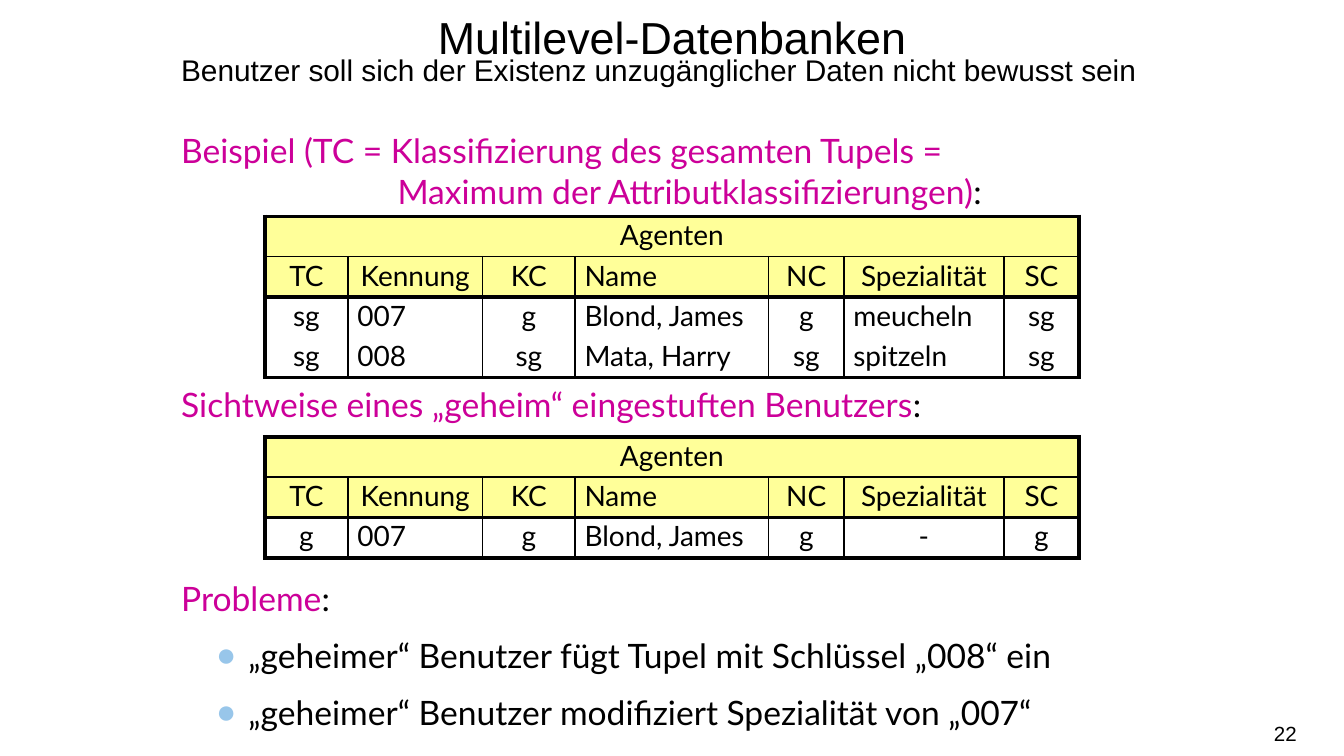
"""Build the slide on multilevel databases."""
from dataclasses import dataclass

import pptx
import pptx.dml.color
import pptx.enum.text
import pptx.oxml
import pptx.oxml.ns
import pptx.util
from pptx.util import Inches, Pt

BLACK = pptx.dml.color.RGBColor(0x00, 0x00, 0x00)
MAGENTA = pptx.dml.color.RGBColor(0xCC, 0x00, 0x99)
YELLOW = pptx.dml.color.RGBColor(0xFF, 0xFF, 0x99)
BULLET_BLUE = pptx.dml.color.RGBColor(0x98, 0xC6, 0xEA)

LEFT = pptx.enum.text.PP_ALIGN.LEFT
CENTER = pptx.enum.text.PP_ALIGN.CENTER
RIGHT = pptx.enum.text.PP_ALIGN.RIGHT
MIDDLE = pptx.enum.text.MSO_ANCHOR.MIDDLE
TOP = pptx.enum.text.MSO_ANCHOR.TOP

SLIDE_WIDTH = 10
SLIDE_HEIGHT = SLIDE_WIDTH * 9 / 16
THICK, THIN, NONE = 2.25, 1, 0
TITLE = "Agenten"
HEADERS = ("TC", "Kennung", "KC", "Name", "NC", "Spezialität", "SC")
COLUMN_WIDTHS = (0.62, 1, 0.69, 1.44, 0.56, 1.19, 0.56)
LEFT_COLUMNS = ("Kennung", "Name", "Spezialität")
ROW_HEIGHT = 0.3


@dataclass(frozen=True)
class Run:
    text: str
    size: float = 18
    font: str = "Lato"
    color: pptx.dml.color.RGBColor = BLACK


@dataclass(frozen=True)
class Line:
    runs: tuple[Run, ...]
    alignment: int = LEFT
    spacing: float = 1.0
    bullet: bool = False
    tab: float = 0


@dataclass(frozen=True)
class Block:
    left: float
    top: float
    width: float
    height: float
    lines: tuple[Line, ...]
    anchor: int = TOP
    side_inset: float = 0.1


@dataclass(frozen=True)
class AgentTable:
    top: float
    records: tuple[tuple[str, ...], ...]


def heading(text: str, tab: float = 0) -> Line:
    return Line((Run(text, color=MAGENTA), Run(":")), tab=tab)


def arial(text: str, size: float, alignment: int, spacing: float = 1.0) -> Line:
    return Line((Run(text, size, "Arial"),), alignment, spacing)


TITLE_BLOCK = Block(1.25, 0, 7.5, 0.45,
                    (arial("Multilevel-Datenbanken", 24, CENTER, 1.25),), MIDDLE)
BLOCKS = (
    Block(1.25, 0.39, 7.5, 0.56, (
        arial("Benutzer soll sich der Existenz unzugänglicher Daten nicht bewusst sein",
              16, LEFT, 0.8),)),
    Block(1.25, 0.92, 7.5, 0.71, (
        heading("Beispiel (TC = Klassifizierung des gesamten Tupels = \n"
                "\tMaximum der Attributklassifizierungen)", 1.61),)),
    Block(1.25, 2.81, 7.5, 0.4, (
        heading("Sichtweise eines „geheim“ eingestuften Benutzers"),)),
    Block(1.25, 4.25, 7.5, 1.31, (
        heading("Probleme"),
        Line((Run("„geheimer“ Benutzer fügt Tupel mit Schlüssel „008“ ein"),), bullet=True),
        Line((Run("„geheimer“ Benutzer modifiziert Spezialität von „007“"),), bullet=True))),
    Block(7.41, 5.31, 2.24, 0.3, (arial("22", 11, RIGHT),), MIDDLE, 0),
)
TABLES = (
    AgentTable(1.61, (("sg", "007", "g", "Blond, James", "g", "meucheln", "sg"),
                      ("sg", "008", "sg", "Mata, Harry", "sg", "spitzeln", "sg"))),
    AgentTable(3.25, (("g", "007", "g", "Blond, James", "g", "-", "g"),)),
)


def add_element(parent, tag: str, **attributes: str):
    element = parent.makeelement(pptx.oxml.ns.qn(tag), attributes)
    parent.append(element)
    return element


def add_run(paragraph, run: Run) -> None:
    for index, part in enumerate(run.text.split("\n")):
        if index:
            paragraph.add_line_break()
        text_run = paragraph.add_run()
        text_run.text = part
        text_run.font.size = Pt(run.size)
        text_run.font.name = run.font
        text_run.font.color.rgb = run.color


def write_line(paragraph, line: Line, first: bool) -> None:
    properties = paragraph._p.get_or_add_pPr()
    if line.bullet:
        paragraph.level = 1
        properties.set("marL", str(Inches(0.5)))
        properties.set("indent", str(Inches(-0.24)))
        bullet_color = add_element(properties, "a:buClr")
        add_element(bullet_color, "a:srgbClr", val=str(BULLET_BLUE))
        add_element(properties, "a:buFont", typeface="Arial")
        add_element(properties, "a:buChar", char="●")
    if line.tab:
        tabs = add_element(properties, "a:tabLst")
        add_element(tabs, "a:tab", pos=str(Inches(line.tab)), algn="l")
    paragraph.alignment = line.alignment
    paragraph.line_spacing = line.spacing
    paragraph.space_before = Pt(0 if first else 9)
    for run in line.runs:
        add_run(paragraph, run)


def fill_block(shape, block: Block) -> None:
    shape.left, shape.top = Inches(block.left), Inches(block.top)
    shape.width, shape.height = Inches(block.width), Inches(block.height)
    frame = shape.text_frame
    frame.word_wrap = True
    frame.auto_size = pptx.enum.text.MSO_AUTO_SIZE.NONE
    frame.vertical_anchor = block.anchor
    frame.margin_left = frame.margin_right = Inches(block.side_inset)
    frame.margin_top = frame.margin_bottom = Inches(0.05)
    for index, line in enumerate(block.lines):
        paragraph = frame.add_paragraph() if index else frame.paragraphs[0]
        write_line(paragraph, line, index == 0)


def set_borders(cell, left: float, right: float, top: float, bottom: float) -> None:
    properties = cell._tc.get_or_add_tcPr()
    for side, width in zip("LRTB", (left, right, top, bottom)):
        border = add_element(properties, f"a:ln{side}", w=str(Pt(width)))
        if width:
            fill = add_element(border, "a:solidFill")
            add_element(fill, "a:srgbClr", val=str(BLACK))
        else:
            add_element(border, "a:noFill")


def write_cell(cell, text: str, alignment: int, filled: bool) -> None:
    cell.margin_left = cell.margin_right = Inches(0.07)
    cell.margin_top, cell.margin_bottom = Inches(0.04), Inches(0.03)
    if filled:
        cell.fill.solid()
        cell.fill.fore_color.rgb = YELLOW
    else:
        cell.fill.background()
    write_line(cell.text_frame.paragraphs[0], Line((Run(text, 15),), alignment, 0.9), True)


def draw_table(slide, agents: AgentTable) -> None:
    rows = (HEADERS, *agents.records)
    last_row, last_column = len(rows), len(HEADERS) - 1
    table = slide.shapes.add_table(
        last_row + 1, len(HEADERS), Inches(1.97), Inches(agents.top),
        Inches(sum(COLUMN_WIDTHS)), Inches(ROW_HEIGHT * (last_row + 1))).table
    table.first_row = table.horz_banding = False
    for column, width in zip(table.columns, COLUMN_WIDTHS):
        column.width = Inches(width)
    for row in table.rows:
        row.height = Inches(ROW_HEIGHT)
    title_cell = table.cell(0, 0)
    title_cell.merge(table.cell(0, last_column))
    set_borders(title_cell, THICK, THICK, THICK, THIN)
    write_cell(title_cell, TITLE, CENTER, True)
    for row_index, values in enumerate(rows, start=1):
        is_header = row_index == 1
        top = {1: THIN, 2: THICK}.get(row_index, NONE)
        bottom = THICK if row_index in (1, last_row) else NONE
        for column_index, (header, text) in enumerate(zip(HEADERS, values)):
            cell = table.cell(row_index, column_index)
            set_borders(cell, THIN if column_index else THICK,
                        THICK if column_index == last_column else THIN, top, bottom)
            is_left = header == "Name" if is_header else header in LEFT_COLUMNS and text != "-"
            write_cell(cell, text, LEFT if is_left else CENTER, is_header)


def main() -> None:
    presentation = pptx.Presentation()
    presentation.slide_width = Inches(SLIDE_WIDTH)
    presentation.slide_height = Inches(SLIDE_HEIGHT)
    slide = presentation.slides.add_slide(presentation.slide_layouts[5])
    fill_block(slide.shapes.title, TITLE_BLOCK)
    for block in BLOCKS:
        fill_block(slide.shapes.add_textbox(0, 0, 0, 0), block)
    for agents in TABLES:
        draw_table(slide, agents)
    presentation.save("out.pptx")


if __name__ == "__main__":
    main()
